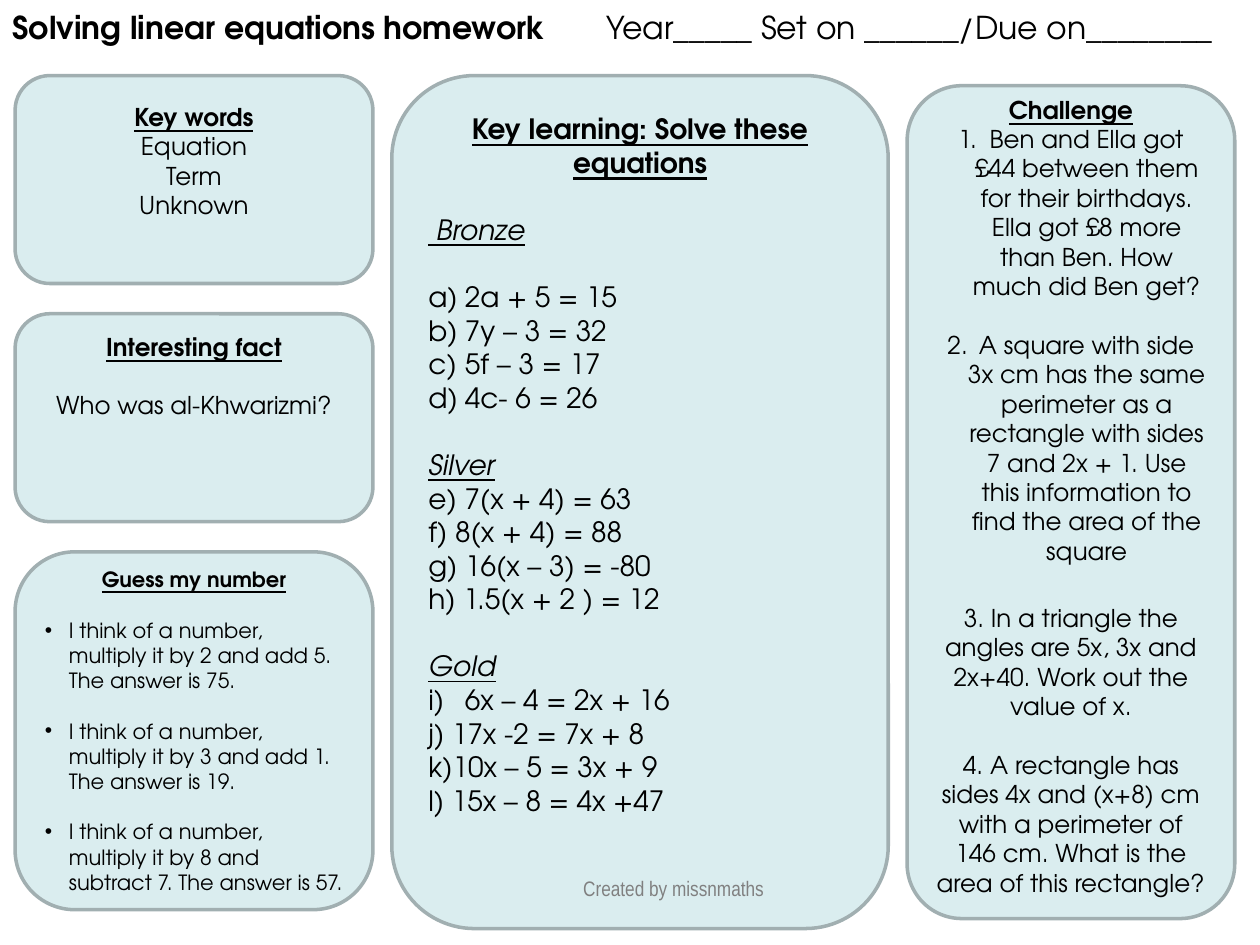
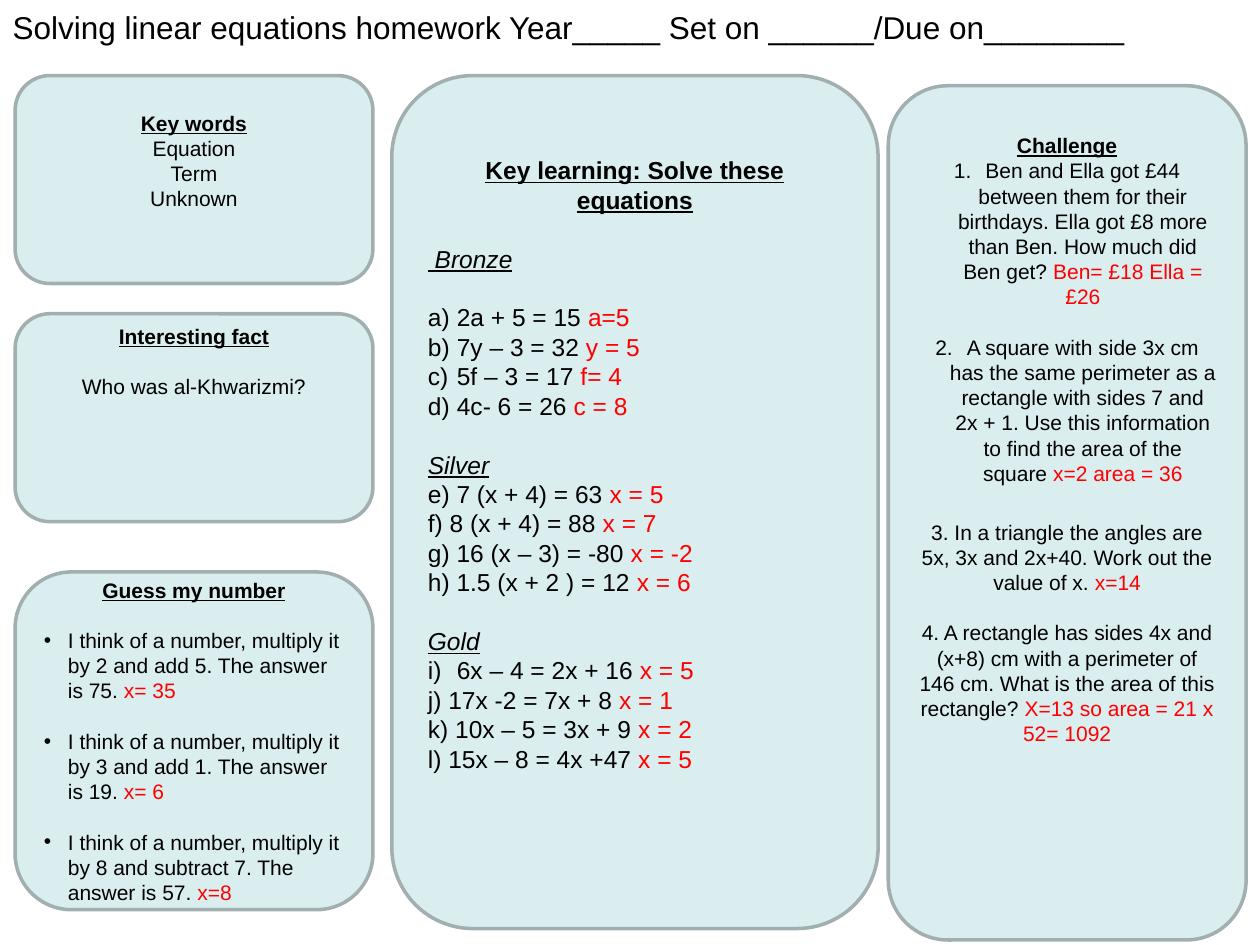
from dataclasses import dataclass

from lxml.etree import SubElement
from pptx import Presentation
from pptx.dml.color import RGBColor
from pptx.enum.shapes import MSO_SHAPE
from pptx.enum.text import MSO_ANCHOR, MSO_AUTO_SIZE, PP_ALIGN
from pptx.oxml.ns import qn
from pptx.util import Emu, Inches, Pt


@dataclass(frozen=True)
class Theme:
    panel: RGBColor = RGBColor(0xDA, 0xED, 0xEF)
    border: RGBColor = RGBColor(0xA1, 0xAF, 0xB1)
    text: RGBColor = RGBColor(0, 0, 0)
    answer: RGBColor = RGBColor(0xFF, 0, 0)
    credit: RGBColor = RGBColor(0x80, 0x80, 0x80)
    border_width: float = 2
    line_factor: float = 1.2
    title_size: int = 18
    credit_size: int = 12
    credit_font: str = "Arial Narrow"


@dataclass(frozen=True)
class Sheet:
    """What differs between the pupil sheet and the answer sheet.

    Panel places are left, top, width, height in percent of the slide;
    blank_below is the room kept free under the centred text, in points.
    """
    font: str
    with_answers: bool
    sizes: dict
    places: dict
    blank_below: dict
    letter_hang: float


@dataclass(frozen=True)
class Line:
    text: str
    answer: str = ""
    answer_sheet_text: str = ""
    style: str = "body"
    centred: bool = True
    marker: str = ""
    start: int = 1
    gap: bool = False
    extra_gap: float = 0


THEME = Theme()
WIDTH, HEIGHT = Inches(10), Inches(7.5)
LEFT, PANEL_WIDTH = 1.2, 28.4
TOP, ROW_PITCH, ROW_HEIGHT = 8, 25.2, 22
MIDDLE, MIDDLE_HEIGHT = 31.1, 90.27
GUESS_BOTTOM = 96.27
NUMBER_HANG, BULLET_HANG = 0.25, 0.19


def guess_place(top):
    return LEFT, top, PANEL_WIDTH, GUESS_BOTTOM - top


def panel_places(middle_width, guess_top, challenge):
    return {
        "words": (LEFT, TOP, PANEL_WIDTH, ROW_HEIGHT),
        "fact": (LEFT, TOP + ROW_PITCH, PANEL_WIDTH, ROW_HEIGHT),
        "guess": guess_place(guess_top),
        "learning": (MIDDLE, TOP, middle_width, MIDDLE_HEIGHT),
        "challenge": challenge,
    }


PUPIL_SHEET = Sheet(
    font="TeX Gyre Adventor",
    with_answers=False,
    sizes=dict(words=14, fact=14, guess=12, learning=16, challenge=14),
    places=panel_places(39.4, TOP + 2 * ROW_PITCH, (72, 9.07, 26, 88.13)),
    blank_below=dict(words=21.6, fact=48, guess=0, learning=43.2, challenge=7.2),
    letter_hang=0.29,
)
ANSWER_SHEET = Sheet(
    font="Arial",
    with_answers=True,
    sizes=dict(words=12, fact=12, guess=12, learning=14, challenge=12),
    places=panel_places(38.6, 60.53, (70.5, 9.07, PANEL_WIDTH, 90.4)),
    blank_below=dict(words=21.6, fact=64.8, guess=0, learning=43.2, challenge=84),
    letter_hang=0.23,
)


def heading(text):
    return Line(text, style="heading")


def tier(text):
    return Line(text, style="tier", centred=False, gap=True)


def puzzle(text, answer):
    return Line(text, answer, centred=False, marker="bullet", gap=True)


def lettered(text, answer, start, gap=False):
    return Line(text, answer, centred=False, marker="letter", start=start, gap=gap)


def equation(text, answer, answer_sheet_text=""):
    return Line(text, answer, answer_sheet_text, centred=False)


PANELS = {
    "words": [heading("Key words"), Line("Equation"), Line("Term"), Line("Unknown")],
    "fact": [heading("Interesting fact"), Line("Who was al-Khwarizmi?", gap=True)],
    "guess": [
        heading("Guess my number"),
        puzzle("I think of a number, multiply it by 2 and add 5. The answer is 75.", "x= 35"),
        puzzle("I think of a number, multiply it by 3 and add 1. The answer is 19.", "x= 6"),
        puzzle("I think of a number, multiply it by 8 and subtract 7. The answer is 57.", "x=8"),
    ],
    "learning": [
        heading("Key learning: Solve these equations"),
        tier(" Bronze"),
        lettered("2a + 5 = 15", "a=5", 1, gap=True),
        lettered("7y – 3 = 32", "y = 5", 2),
        lettered("5f – 3 = 17", "f= 4", 3),
        lettered("4c- 6 = 26", "c = 8", 4),
        tier("Silver"),
        equation("e) 7(x + 4) = 63", "x = 5", "e) 7 (x + 4) = 63"),
        equation("f) 8(x + 4) = 88", "x = 7", "f) 8 (x + 4) = 88"),
        equation("g) 16(x – 3) = -80", "x = -2", "g) 16 (x – 3) = -80"),
        equation("h) 1.5(x + 2 ) = 12", "x = 6", "h) 1.5 (x + 2 ) = 12"),
        tier("Gold"),
        lettered("6x – 4 = 2x + 16", "x = 5", 9),
        equation("j) 17x -2 = 7x + 8", "x = 1"),
        equation("k)10x – 5 = 3x + 9", "x = 2", "k) 10x – 5 = 3x + 9"),
        equation("l) 15x – 8 = 4x +47", "x = 5"),
    ],
    "challenge": [
        heading("Challenge"),
        Line("Ben and Ella got £44 between them for their birthdays. "
             "Ella got £8 more than Ben. How much did Ben get?",
             "Ben= £18 Ella = £26", marker="number"),
        Line("A square with side 3x cm has the same perimeter as a rectangle with sides "
             "7 and 2x + 1. Use this information to find the area of the square",
             "x=2 area = 36", marker="number", start=2, gap=True),
        Line("3. In a triangle the angles are 5x, 3x and 2x+40. Work out the value of x.",
             "x=14", gap=True, extra_gap=4.8),
        Line("4. A rectangle has sides 4x and (x+8) cm with a perimeter of 146 cm. "
             "What is the area of this rectangle?",
             "X=13 so area = 21 x 52= 1092", gap=True),
    ],
}


def add_marker(paragraph, line, letter_hang):
    hang = {"bullet": BULLET_HANG, "number": NUMBER_HANG, "letter": letter_hang}[line.marker]
    properties = paragraph._p.get_or_add_pPr()
    properties.set("marL", str(Inches(hang)))
    properties.set("indent", str(-Inches(hang)))
    if line.marker == "bullet":
        SubElement(properties, qn("a:buFont"), typeface="Arial")
        SubElement(properties, qn("a:buChar"), char="•")
    else:
        scheme = "arabicPeriod" if line.marker == "number" else "alphaLcParenR"
        SubElement(properties, qn("a:buFont"), typeface="+mj-lt")
        SubElement(properties, qn("a:buAutoNum"), type=scheme, startAt=str(line.start))


def add_run(paragraph, text, font_name, size, colour, style="body"):
    run = paragraph.add_run()
    run.text = text
    font = run.font
    font.name, font.size = font_name, Pt(size)
    font.color.rgb = colour
    font.bold = style == "heading"
    font.italic = style == "tier"
    font.underline = style in ("heading", "tier")


def write_line(paragraph, line, sheet, size):
    if line.marker:
        add_marker(paragraph, line, sheet.letter_hang)
    paragraph.alignment = PP_ALIGN.CENTER if line.centred else PP_ALIGN.LEFT
    paragraph.line_spacing = Pt(THEME.line_factor * size)
    if line.gap:
        paragraph.space_before = Pt(THEME.line_factor * size + line.extra_gap)
    text = line.text
    if sheet.with_answers:
        text = line.answer_sheet_text or text
        if line.answer:
            text += " "
    add_run(paragraph, text, sheet.font, size, THEME.text, line.style)
    if sheet.with_answers and line.answer:
        add_run(paragraph, line.answer, sheet.font, size, THEME.answer)


def add_panel(slide, sheet, name):
    left, top, width, height = sheet.places[name]
    shape = slide.shapes.add_shape(
        MSO_SHAPE.ROUNDED_RECTANGLE,
        Emu(int(WIDTH * left / 100)), Emu(int(HEIGHT * top / 100)),
        Emu(int(WIDTH * width / 100)), Emu(int(HEIGHT * height / 100)))
    shape.shadow.inherit = False
    shape.fill.solid()
    shape.fill.fore_color.rgb = THEME.panel
    shape.line.color.rgb = THEME.border
    shape.line.width = Pt(THEME.border_width)
    frame = shape.text_frame
    frame.word_wrap = True
    frame.vertical_anchor = MSO_ANCHOR.MIDDLE
    frame.margin_top, frame.margin_bottom = 0, Pt(sheet.blank_below[name])
    for index, line in enumerate(PANELS[name]):
        paragraph = frame.add_paragraph() if index else frame.paragraphs[0]
        write_line(paragraph, line, sheet, sheet.sizes[name])


def set_title(slide, sheet):
    title = slide.shapes.title
    title.left, title.top = 0, Inches(0.01)
    title.width, title.height = WIDTH, Inches(0.4)
    frame = title.text_frame
    frame.word_wrap = True
    frame.auto_size = MSO_AUTO_SIZE.NONE
    frame.vertical_anchor = MSO_ANCHOR.TOP
    paragraph = frame.paragraphs[0]
    subject = "Solving linear equations homework"
    dates = "Year_____ Set on ______/Due on________"
    if sheet.with_answers:
        parts = [(f"{subject} {dates}", "body")]
    else:
        tabs = SubElement(paragraph._p.get_or_add_pPr(), qn("a:tabLst"))
        SubElement(tabs, qn("a:tab"), pos=str(Inches(4.71)), algn="l")
        parts = [(f"{subject}\t", "heading"), (dates, "body")]
    paragraph.alignment = PP_ALIGN.LEFT
    paragraph.line_spacing = Pt(THEME.line_factor * THEME.title_size)
    for text, style in parts:
        add_run(paragraph, text, sheet.font, THEME.title_size, THEME.text, style)
    for run in paragraph.runs:
        run.font.underline = False


def add_credit(slide):
    box = slide.shapes.add_textbox(
        Emu(int(WIDTH * 0.453)), Emu(int(HEIGHT * 0.92)), Inches(1.65), Inches(0.3))
    box.text_frame.word_wrap = False
    add_run(box.text_frame.paragraphs[0], "Created by missnmaths",
            THEME.credit_font, THEME.credit_size, THEME.credit)


def add_sheet(presentation, sheet):
    slide = presentation.slides.add_slide(presentation.slide_layouts[5])
    set_title(slide, sheet)
    for name in PANELS:
        add_panel(slide, sheet, name)
    return slide


def main():
    presentation = Presentation()
    presentation.slide_width, presentation.slide_height = WIDTH, HEIGHT
    add_credit(add_sheet(presentation, PUPIL_SHEET))
    add_sheet(presentation, ANSWER_SHEET)
    presentation.save("out.pptx")


if __name__ == "__main__":
    main()
